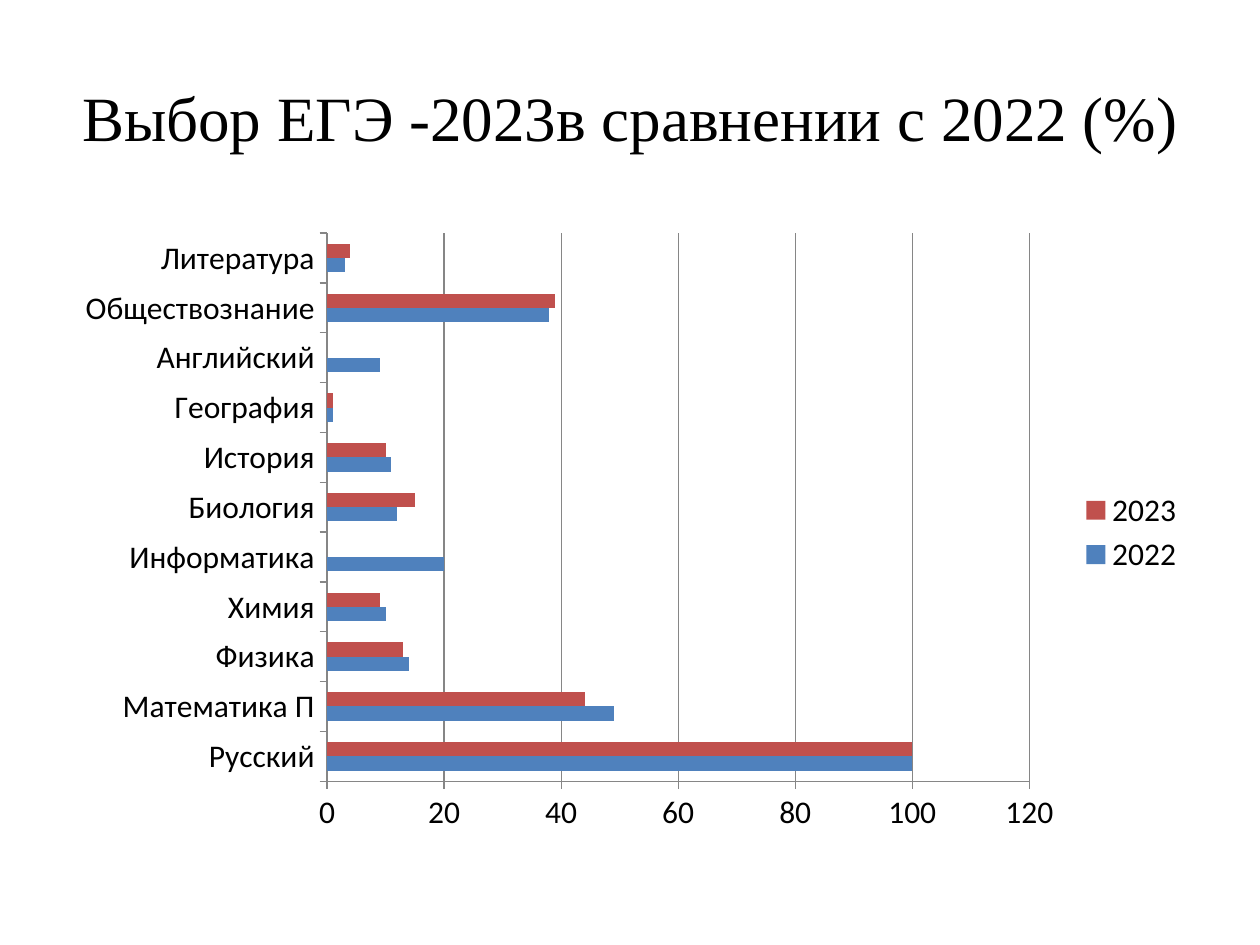
from pptx import Presentation
from pptx.chart.data import CategoryChartData
from pptx.dml.color import RGBColor
from pptx.enum.chart import XL_CHART_TYPE, XL_LEGEND_POSITION, XL_TICK_MARK
from pptx.enum.text import MSO_ANCHOR, PP_ALIGN
from pptx.util import Cm, Pt

SUBJECTS = ["Русский", "Математика П", "Физика", "Химия", "Информатика", "Биология",
            "История", "География", "Английский", "Обществознание", "Литература"]
YEARS = {
    "2022": ("4F81BD", [100, 49, 14, 10, 20, 12, 11, 1, 9, 38, 3]),
    "2023": ("C0504D", [100, 44, 13, 9, None, 15, 10, 1, None, 39, 4]),
}
BLACK = "000000"
AXIS_GRAY = "868686"


def color(value):
    """Turn a hex string into a colour."""
    return RGBColor.from_string(value)


def style_font(font, name, size):
    """Set the typeface, size and black colour of a font."""
    font.name = name
    font.size = Pt(size)
    font.color.rgb = color(BLACK)


def style_line(line):
    """Give an axis line or gridline its thin gray stroke."""
    line.color.rgb = color(AXIS_GRAY)
    line.width = Pt(0.75)


def add_title(page, text):
    """Add the centred slide title."""
    box = page.shapes.add_textbox(Cm(1.27), Cm(0.76), Cm(22.86), Cm(3.18))
    frame = box.text_frame
    frame.word_wrap = True
    frame.vertical_anchor = MSO_ANCHOR.MIDDLE
    para = frame.paragraphs[0]
    para.alignment = PP_ALIGN.CENTER
    span = para.add_run()
    span.text = text
    style_font(span.font, "Times New Roman", 36)


def add_exam_chart(page):
    """Add the bar chart comparing exam choices by year."""
    data = CategoryChartData()
    data.categories = SUBJECTS
    for year, (_, shares) in YEARS.items():
        data.add_series(year, shares)
    chart = page.shapes.add_chart(XL_CHART_TYPE.BAR_CLUSTERED, Cm(1.27), Cm(4.45),
                                  Cm(22.86), Cm(12.57), data).chart
    style_font(chart.font, "Calibri", 18)
    chart.has_title = False
    chart.has_legend = True
    chart.legend.position = XL_LEGEND_POSITION.RIGHT
    chart.legend.include_in_layout = False
    plot = chart.plots[0]
    plot.gap_width = 150
    plot.vary_by_categories = False
    for series in plot.series:
        series.format.fill.solid()
        series.format.fill.fore_color.rgb = color(YEARS[series.name][0])
        series.invert_if_negative = False
    for axis in (chart.category_axis, chart.value_axis):
        axis.major_tick_mark = XL_TICK_MARK.OUTSIDE
        axis.minor_tick_mark = XL_TICK_MARK.NONE
        style_line(axis.format.line)
    chart.category_axis.has_major_gridlines = False
    chart.value_axis.has_major_gridlines = True
    style_line(chart.value_axis.major_gridlines.format.line)
    chart.value_axis.minimum_scale = 0
    chart.value_axis.maximum_scale = 120
    chart.value_axis.major_unit = 20


def main():
    """Build the slide and save the deck."""
    deck = Presentation()
    deck.slide_width = Cm(25.4)
    deck.slide_height = Cm(19.05)
    page = deck.slides.add_slide(deck.slide_layouts[6])
    add_title(page, "Выбор ЕГЭ -2023в сравнении с 2022 (%)")
    add_exam_chart(page)
    deck.save("out.pptx")


if __name__ == "__main__":
    main()
